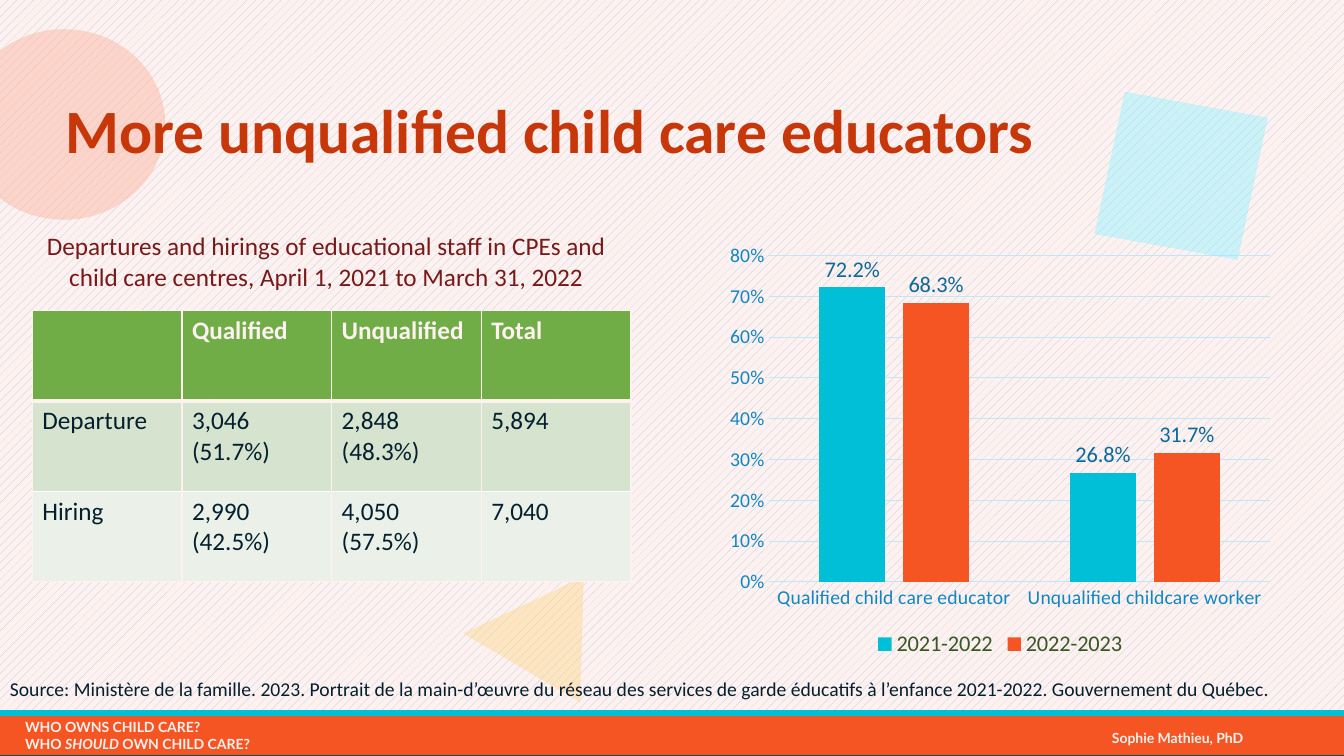
"""Build the slide on unqualified child care educators."""
from dataclasses import dataclass
from typing import Optional

from lxml.etree import SubElement as Sub
from pptx import Presentation
from pptx.chart.data import CategoryChartData as Data
from pptx.dml.color import RGBColor as RGB
from pptx.enum.chart import XL_CHART_TYPE as Kind
from pptx.enum.chart import XL_LABEL_POSITION as Spot
from pptx.enum.chart import XL_LEGEND_POSITION as Side
from pptx.enum.chart import XL_TICK_MARK as Tick
from pptx.enum.dml import MSO_PATTERN as Pat
from pptx.enum.shapes import MSO_SHAPE as Form
from pptx.enum.text import MSO_ANCHOR as Anchor
from pptx.enum.text import PP_ALIGN as Align
from pptx.oxml.ns import qn
from pptx.slide import Slide
from pptx.util import Inches, Pt


@dataclass(frozen=True)
class Theme:
    body: str = "Calibri"
    foot: str = "Lato"
    paper: str = "FEF1F0"
    hatch: str = "AACBDE"
    ink: str = "04202E"
    title: str = "C7370A"
    wine: str = "781A19"
    cyan: str = "00BFD7"
    orange: str = "F45523"
    teal: str = "00545E"
    gold: str = "FED78B"
    peach: str = "FBBBA7"
    aqua: str = "89F2FF"
    blue: str = "1187C2"
    navy: str = "0D6A98"
    grid: str = "C0E6F9"
    moss: str = "385723"
    rows: tuple[str, ...] = ("70AD47", "D5E3CF", "EBF1E9")
    huge: float = 44
    large: float = 18
    mid: float = 16
    small: float = 14
    tiny: float = 10


T = Theme()
Box = tuple[float, float, float, float]


@dataclass(frozen=True)
class Block:
    form: Form
    box: Box
    fill: str
    alpha: int = 100
    turn: float = 0
    line: Optional[str] = None
    adj: Optional[float] = None


@dataclass(frozen=True)
class Label:
    box: Box
    text: str
    size: float
    color: str
    font: str = T.body
    bold: bool = False
    align: Align = Align.LEFT
    anchor: Anchor = Anchor.TOP
    space: float = 1
    slant: str = ""
    tail: str = ""


BARS = (
    Block(Form.RECTANGLE, (-0.09, 7.1, 13.68, 0.4), T.orange, line=T.teal),
    Block(Form.RECTANGLE, (-0.09, 7.05, 13.68, 0.05), T.cyan, line=T.cyan),
)
DECOR = (
    Block(Form.ISOSCELES_TRIANGLE, (4.77, 5.95, 1.32, 1.11), T.gold, 46, 154.8, adj=0.427),
    Block(Form.OVAL, (-0.37, 0.29, 2.01, 1.89), T.peach, 53),
)
TILE = Block(Form.DIAMOND, (10.71, 0.71, 2.01, 2.07), T.aqua, 42, 56.1)
FOOT = (
    Label((0.15, 7.08, 2.65, 0.44), "WHO OWNS CHILD CARE?\nWHO ", T.tiny, T.paper,
          T.foot, True, slant="SHOULD", tail=" OWN CHILD CARE?"),
    Label((10.93, 7.19, 2.65, 0.27), "Sophie Mathieu, PhD", T.tiny, T.paper, T.foot, True),
)
TITLE = Label((0.55, 0.83, 11, 0.98), "More unqualified child care educators", T.huge,
              T.title, bold=True, anchor=Anchor.MIDDLE, space=0.9)
NOTES = (
    Label((0.34, 2.24, 5.79, 0.71), "Departures and hirings of educational staff in CPEs and "
          "child care centres, April 1, 2021 to March 31, 2022", T.large, T.wine,
          align=Align.CENTER),
    Label((0, 6.67, 12.84, 0.34), "Source: Ministère de la famille. 2023. Portrait de la "
          "main-d’œuvre du réseau des services de garde éducatifs à l’enfance 2021-2022. "
          "Gouvernement du Québec.", T.small, T.ink),
)
CELLS = (
    ("", "Qualified", "Unqualified", "Total"),
    ("Departure", "3,046\n(51.7%)", "2,848\n(48.3%)", "5,894"),
    ("Hiring", "2,990\n(42.5%)", "4,050\n(57.5%)", "7,040"),
)
CATS = ("Qualified child care educator", "Unqualified childcare worker")
YEARS = (("2021-2022", (0.722, 0.268), T.cyan), ("2022-2023", (0.683, 0.317), T.orange))


def place(box: Box) -> list[int]:
    return [Inches(side) for side in box]


def style(font, size: float, color: str, name: str = T.body, bold: bool = False) -> None:
    font.size, font.name, font.bold = Pt(size), name, bold
    font.color.rgb = RGB.from_string(color)


def paint(fill, color: str) -> None:
    fill.solid()
    fill.fore_color.rgb = RGB.from_string(color)


def stroke(line, color: str, width: float) -> None:
    paint(line.fill, color)
    line.width = Pt(width)


def draw(slide: Slide, item: Block) -> None:
    shape = slide.shapes.add_shape(item.form, *place(item.box))
    shape.shadow.inherit = False
    shape.rotation = item.turn
    paint(shape.fill, item.fill)
    if item.adj is not None:
        shape.adjustments[0] = item.adj
    if item.alpha < 100:
        tint = next(shape.element.spPr.iter(qn("a:srgbClr")))
        Sub(tint, qn("a:alpha")).set("val", str(item.alpha * 1000))
    if item.line:
        stroke(shape.line, item.line, 1)
    else:
        shape.line.fill.background()


def write(slide: Slide, item: Label) -> None:
    frame = slide.shapes.add_textbox(*place(item.box)).text_frame
    frame.word_wrap = True
    frame.vertical_anchor = item.anchor
    para = frame.paragraphs[0]
    para.text = item.text
    para.alignment, para.line_spacing = item.align, item.space
    for part in filter(None, (item.slant, item.tail)):
        para.add_run().text = part
    for run in para.runs:
        style(run.font, item.size, item.color, item.font, item.bold)
        run.font.italic = run.text == item.slant


def edge(cell, side: str, width: float) -> None:
    line = Sub(cell._tc.get_or_add_tcPr(), qn(f"a:ln{side}"), w=str(Pt(width)))
    Sub(Sub(line, qn("a:solidFill")), qn("a:srgbClr"), val=T.paper)


def add_grid(slide: Slide) -> None:
    box = place((0.32, 3.08, 5.94, 2.69))
    table = slide.shapes.add_table(len(CELLS), len(CELLS[0]), *box).table
    table.horz_banding = False
    for r, texts in enumerate(CELLS):
        head = r == 0
        for c, text in enumerate(texts):
            cell = table.cell(r, c)
            cell.text_frame.text = text
            for para in cell.text_frame.paragraphs:
                style(para.font, T.large, T.paper if head else T.ink, bold=head)
                for run in para.runs:
                    style(run.font, T.large, T.paper if head else T.ink, bold=head)
            for side in "LRTB" if head else "LRB":
                edge(cell, side, 3 if head and side == "B" else 1)
            paint(cell.fill, T.rows[r])


def add_plot(slide: Slide) -> None:
    data = Data(number_format="0.0%")
    data.categories = CATS
    for name, vals, _ in YEARS:
        data.add_series(name, vals)
    box = place((7.13, 2.33, 5.58, 4.24))
    chart = slide.shapes.add_chart(Kind.COLUMN_CLUSTERED, *box, data).chart
    style(chart.font, T.tiny, T.ink)
    chart.has_title = False
    chart.has_legend = True
    chart.legend.position = Side.BOTTOM
    chart.legend.include_in_layout = False
    style(chart.legend.font, T.mid, T.moss)
    cat, val = chart.category_axis, chart.value_axis
    for axis in (cat, val):
        axis.major_tick_mark = axis.minor_tick_mark = Tick.NONE
        style(axis.tick_labels.font, T.small, T.blue)
    stroke(cat.format.line, T.grid, 0.75)
    val.format.line.fill.background()
    stroke(val.major_gridlines.format.line, T.grid, 0.75)
    val.minimum_scale, val.maximum_scale, val.major_unit = 0, 0.8, 0.1
    val.tick_labels.number_format = "0%"
    val.tick_labels.number_format_is_linked = False
    plot = chart.plots[0]
    plot.gap_width, plot.overlap, plot.vary_by_categories = 153, -27, False
    for bars, (_, _, color) in zip(plot.series, YEARS):
        paint(bars.format.fill, color)
        tags = bars.data_labels
        tags.show_value, tags.position = True, Spot.OUTSIDE_END
        tags.number_format, tags.number_format_is_linked = "0.0%", False
        style(tags.font, T.mid, T.navy)


def main() -> None:
    deck = Presentation()
    deck.slide_width, deck.slide_height = Inches(13.33), Inches(7.5)
    slide = deck.slides.add_slide(deck.slide_layouts[6])
    back = slide.background.fill
    back.patterned()
    back.pattern = Pat.PERCENT_20
    back.fore_color.rgb = RGB.from_string(T.hatch)
    back.back_color.rgb = RGB.from_string(T.paper)
    for bar in BARS:
        draw(slide, bar)
    for label in FOOT:
        write(slide, label)
    for item in DECOR:
        draw(slide, item)
    write(slide, TITLE)
    add_plot(slide)
    add_grid(slide)
    for label in NOTES:
        write(slide, label)
    draw(slide, TILE)
    deck.save("out.pptx")


if __name__ == "__main__":
    main()
